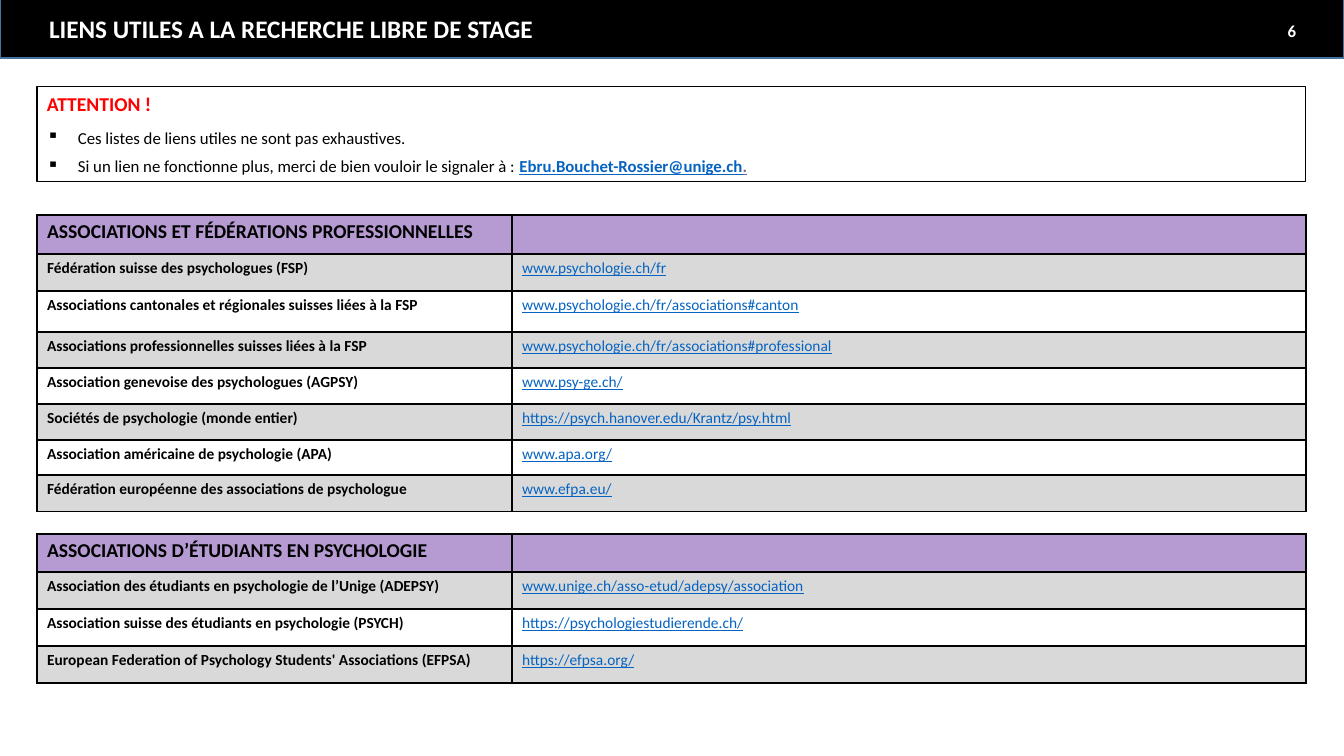
from dataclasses import dataclass

from lxml import etree
from pptx import Presentation
from pptx import util as u
from pptx.dml.color import RGBColor
from pptx.enum import shapes, text
from pptx.oxml.ns import qn

SCALE = 12192000 / 1344
BLACK, WHITE, RED = "000000", "FFFFFF", "FF0000"
PURPLE, GREY, LINK, FULL_STOP = "B59BD1", "D9D9D9", "0563C1", "71648A"
LEFT, WIDTH = 37, 1269
COLUMNS = (475, 794)


@dataclass
class Directory:
    """A titled table of organisations and their web addresses."""
    heading: str
    top: int
    heights: list[int]
    entries: list[tuple[str, str]]


DIRECTORIES = [
    Directory("ASSOCIATIONS ET FÉDÉRATIONS PROFESSIONNELLES", 215,
              [39, 37, 41, 36, 36, 36, 35, 37], [
        ("Fédération suisse des psychologues (FSP)", "www.psychologie.ch/fr"),
        ("Associations cantonales et régionales suisses liées à la FSP",
         "www.psychologie.ch/fr/associations#canton"),
        ("Associations professionnelles suisses liées à la FSP",
         "www.psychologie.ch/fr/associations#professional"),
        ("Association genevoise des psychologues (AGPSY)", "www.psy-ge.ch/"),
        ("Sociétés de psychologie (monde entier)",
         "https://psych.hanover.edu/Krantz/psy.html"),
        ("Association américaine de psychologie (APA)", "www.apa.org/"),
        ("Fédération européenne des associations de psychologue", "www.efpa.eu/"),
    ]),
    Directory("ASSOCIATIONS D’ÉTUDIANTS EN PSYCHOLOGIE", 534, [38, 37, 37, 37], [
        ("Association des étudiants en psychologie de l’Unige (ADEPSY)",
         "www.unige.ch/asso-etud/adepsy/association"),
        ("Association suisse des étudiants en psychologie (PSYCH)",
         "https://psychologiestudierende.ch/"),
        ("European Federation of Psychology Students' Associations (EFPSA)",
         "https://efpsa.org/"),
    ]),
]


def px(length: float) -> u.Emu:
    """Turn pixels into EMU."""
    return u.Emu(round(length * SCALE))


def box(left: int, top: int, width: int, height: int) -> tuple:
    """Give a position and size in EMU."""
    return px(left), px(top), px(width), px(height)


def paint(target, colour: str) -> None:
    """Apply a solid colour to a fill."""
    target.solid()
    target.fore_color.rgb = RGBColor.from_string(colour)


def style(font, size: float, colour: str, bold: bool = False,
          underline: bool = False) -> None:
    """Set every visible property of a font."""
    font.name, font.size = "Calibri", u.Pt(size)
    font.bold, font.underline = bold, underline
    font.color.rgb = RGBColor.from_string(colour)


def add_bullet(paragraph, space_before: float) -> None:
    """Give a paragraph a square bullet with a hanging indent."""
    paragraph.space_before = u.Pt(space_before)
    properties = paragraph._p.get_or_add_pPr()
    properties.set("marL", str(px(31)))
    properties.set("indent", str(-px(31)))
    etree.SubElement(properties, qn("a:buChar"), char="▪")


def add_borders(cell) -> None:
    """Draw a black one-point line on each side of a cell."""
    properties = cell._tc.get_or_add_tcPr()
    for side in ("lnL", "lnR", "lnT", "lnB"):
        line = etree.SubElement(properties, qn(f"a:{side}"), w=str(u.Pt(1)))
        solid = etree.SubElement(line, qn("a:solidFill"))
        etree.SubElement(solid, qn("a:srgbClr"), val=BLACK)


def add_title(slide) -> None:
    """Turn the title placeholder into the black banner."""
    title = slide.shapes.title
    title.left, title.top, title.width, title.height = box(0, -2, 1344, 60)
    paint(title.fill, BLACK)
    paint(title.line.fill, "43739E")
    title.line.width = u.Pt(1)
    frame = title.text_frame
    frame.text = "LIENS UTILES A LA RECHERCHE LIBRE DE STAGE"
    frame.vertical_anchor = text.MSO_ANCHOR.MIDDLE
    frame.margin_left = px(49)
    frame.paragraphs[0].alignment = text.PP_ALIGN.LEFT
    style(frame.paragraphs[0].font, 18, WHITE, bold=True)


def add_page_number(slide) -> None:
    """Write the page number at the right of the banner."""
    frame = slide.shapes.add_textbox(*box(1004, 11, 302, 40)).text_frame
    frame.word_wrap = True
    frame.vertical_anchor = text.MSO_ANCHOR.MIDDLE
    number = frame.paragraphs[0]
    number.text, number.alignment = "6", text.PP_ALIGN.RIGHT
    style(number.font, 12, WHITE, bold=True)


def add_notice(slide) -> None:
    """Add the framed warning about the lists."""
    notice = slide.shapes.add_shape(shapes.MSO_SHAPE.RECTANGLE,
                                    *box(LEFT, 87, WIDTH, 95))
    notice.shadow.inherit = False
    paint(notice.fill, WHITE)
    paint(notice.line.fill, BLACK)
    notice.line.width = u.Pt(0.75)
    frame = notice.text_frame
    frame.word_wrap = True
    frame.vertical_anchor = text.MSO_ANCHOR.TOP
    warning, limits, contact = (frame.paragraphs[0], frame.add_paragraph(),
                                frame.add_paragraph())
    warning.text = "ATTENTION !"
    style(warning.font, 14, RED, bold=True)
    limits.text = "Ces listes de liens utiles ne sont pas exhaustives."
    add_bullet(limits, 8.5)
    style(limits.font, 12, BLACK)
    add_bullet(contact, 6)
    for words, colour, is_link in (
            ("Si un lien ne fonctionne plus, merci de bien vouloir le signaler à : ",
             BLACK, False),
            ("Ebru.Bouchet-Rossier@unige.ch", LINK, True),
            (".", FULL_STOP, True)):
        run = contact.add_run()
        run.text = words
        style(run.font, 12, colour, is_link, is_link)
    for paragraph in frame.paragraphs:
        paragraph.alignment = text.PP_ALIGN.LEFT


def fill_cell(cell, words: str, background: str, size: float, colour: str,
              bold: bool, underline: bool) -> None:
    """Write and format one table cell."""
    add_borders(cell)
    paint(cell.fill, background)
    cell.margin_bottom = 0
    cell.text = words
    style(cell.text_frame.paragraphs[0].font, size, colour, bold, underline)


def add_directory(slide, directory: Directory) -> None:
    """Add one table of links."""
    rows = [(directory.heading, ""), *directory.entries]
    table = slide.shapes.add_table(
        len(rows), len(COLUMNS),
        *box(LEFT, directory.top, WIDTH, sum(directory.heights))).table
    table.first_row = table.horz_banding = False
    for column, width in zip(table.columns, COLUMNS):
        column.width = px(width)
    for index, (name, address) in enumerate(rows):
        table.rows[index].height = px(directory.heights[index])
        background = PURPLE if index == 0 else GREY if index % 2 else WHITE
        size = 11 if index else 14
        fill_cell(table.cell(index, 0), name, background, size, BLACK, True, False)
        fill_cell(table.cell(index, 1), address, background, size, LINK, False, True)


def main() -> None:
    """Build and save the slide."""
    presentation = Presentation()
    presentation.slide_width, presentation.slide_height = px(1344), px(756)
    slide = presentation.slides.add_slide(presentation.slide_layouts[5])
    add_title(slide)
    for directory in DIRECTORIES:
        add_directory(slide, directory)
    add_notice(slide)
    add_page_number(slide)
    presentation.save("out.pptx")


if __name__ == "__main__":
    main()
